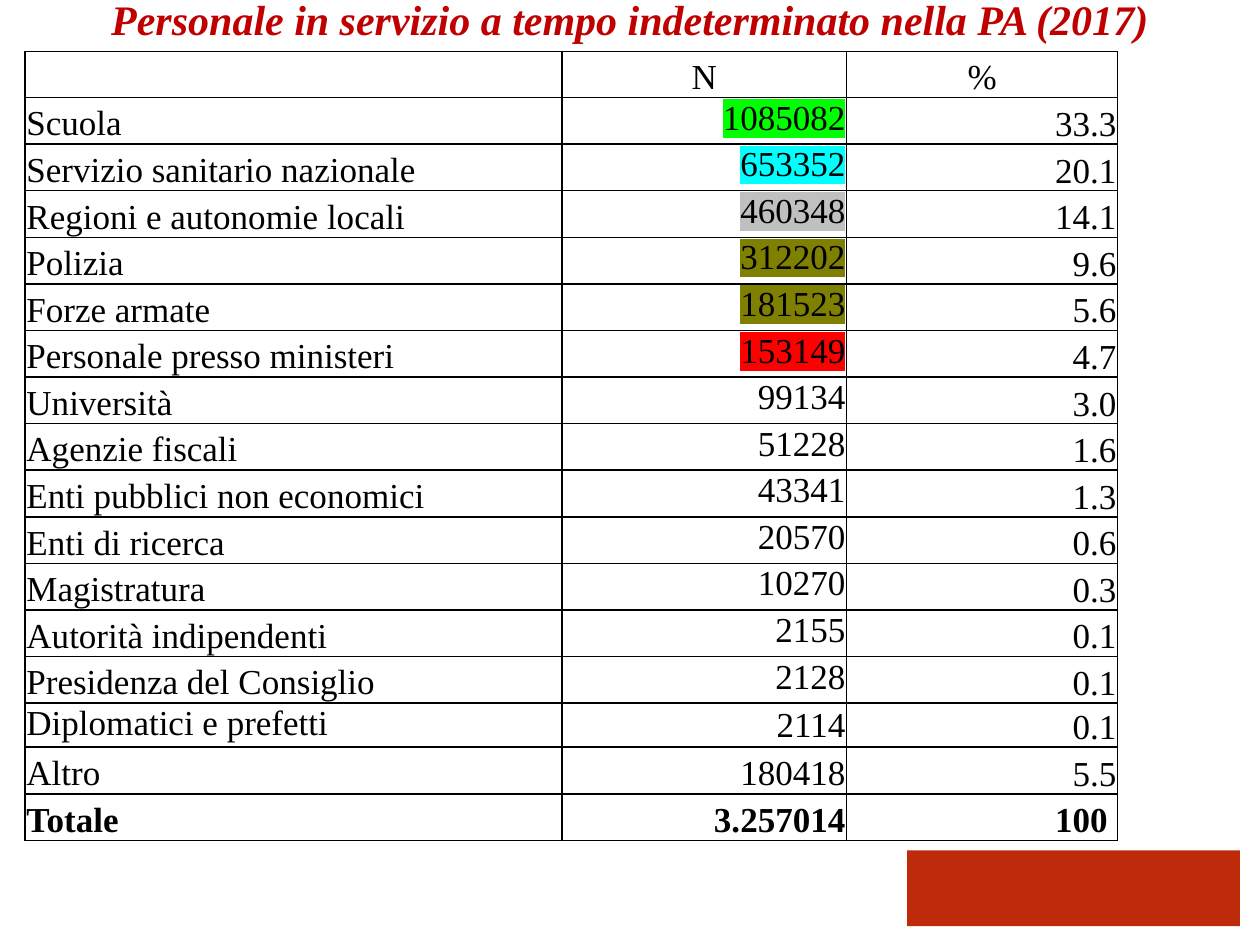
from dataclasses import dataclass

from lxml.etree import SubElement
from pptx import Presentation
from pptx.dml.color import RGBColor
from pptx.enum.shapes import MSO_SHAPE
from pptx.enum.text import MSO_ANCHOR as Anchor, PP_ALIGN as Align
from pptx.oxml import parse_xml
from pptx.oxml.ns import nsdecls, qn
from pptx.util import Inches, Pt


@dataclass(frozen=True)
class Theme:
    font: str = "Times New Roman"
    title_size: int = 24
    table_size: int = 20
    title_color: str = "C00000"
    text_color: str = "000000"
    border_color: str = "000000"
    block_color: str = "BD2B0B"
    border_width: int = 1
    line_spacing: float = 1.15


HEADERS = ["", "N", "%"]
STAFF = [
    ("Scuola", "1085082", "33.3"),
    ("Servizio sanitario nazionale", "653352", "20.1"),
    ("Regioni e autonomie locali", "460348", "14.1"),
    ("Polizia", "312202", "9.6"),
    ("Forze armate", "181523", "5.6"),
    ("Personale presso ministeri", "153149", "4.7"),
    ("Università", "99134", "3.0"),
    ("Agenzie fiscali", "51228", "1.6"),
    ("Enti pubblici non economici", "43341", "1.3"),
    ("Enti di ricerca", "20570", "0.6"),
    ("Magistratura", "10270", "0.3"),
    ("Autorità indipendenti", "2155", "0.1"),
    ("Presidenza del Consiglio", "2128", "0.1"),
    ("Diplomatici e prefetti", "2114", "0.1"),
    ("Altro", "180418", "5.5"),
]
TOTAL = ("Totale", "3.257014", "100 ")
HIGHLIGHTS = {
    "Scuola": "00FF00",
    "Servizio sanitario nazionale": "00FFFF",
    "Regioni e autonomie locali": "C0C0C0",
    "Polizia": "808000",
    "Forze armate": "808000",
    "Personale presso ministeri": "FF0000",
}
COLUMN_WIDTHS = [4.26, 2.26, 2.15]
ROW_HEIGHT, LOW_ROW_HEIGHT = 0.37, 0.35
LOW_ROWS = {"", "Diplomatici e prefetti"}


class SlideBuilder:
    def __init__(self, slide, theme):
        self.slide = slide
        self.theme = theme

    def format_runs(self, paragraph, size, color, bold=False, italic=False):
        for run in paragraph.runs:
            font = run.font
            font.name, font.size = self.theme.font, Pt(size)
            font.bold, font.italic = bold, italic
            font.color.rgb = RGBColor.from_string(color)

    def block(self, left, top, width, height):
        shape = self.slide.shapes.add_shape(
            MSO_SHAPE.RECTANGLE, Inches(left), Inches(top), Inches(width), Inches(height))
        shape.shadow.inherit = False
        shape.fill.solid()
        shape.fill.fore_color.rgb = RGBColor.from_string(self.theme.block_color)
        shape.line.fill.background()

    def title(self, text, left, top, width, height):
        shape = self.slide.shapes.title
        shape.left, shape.top = Inches(left), Inches(top)
        shape.width, shape.height = Inches(width), Inches(height)
        frame = shape.text_frame
        frame.text = text
        frame.word_wrap = True
        frame.vertical_anchor = Anchor.TOP
        paragraph = frame.paragraphs[0]
        paragraph.alignment = Align.CENTER
        self.format_runs(paragraph, self.theme.title_size, self.theme.title_color, True, True)

    def table(self, rows, left, top):
        heights = [LOW_ROW_HEIGHT if row[0] in LOW_ROWS else ROW_HEIGHT for row in rows]
        table = self.slide.shapes.add_table(
            len(rows), len(COLUMN_WIDTHS), Inches(left), Inches(top),
            Inches(sum(COLUMN_WIDTHS)), Inches(sum(heights))).table
        table.first_row = table.horz_banding = False
        for column, width in zip(table.columns, COLUMN_WIDTHS):
            column.width = Inches(width)
        for row, height in zip(table.rows, heights):
            row.height = Inches(height)
        for row_index, row in enumerate(rows):
            for column_index, text in enumerate(row):
                self.cell(table.cell(row_index, column_index), text, row[0], column_index)
        return table

    def cell(self, cell, text, label, column):
        theme = self.theme
        cell.margin_left = cell.margin_right = cell.margin_top = Inches(0.01)
        cell.margin_bottom = 0
        self.borders(cell)
        cell.fill.background()
        cell.text_frame.text = text
        paragraph = cell.text_frame.paragraphs[0]
        is_header, is_total = label == "", label == TOTAL[0]
        is_low = label in LOW_ROWS and not is_header

        # Labels to the left, figures to the right, headers centred
        if is_header:
            paragraph.alignment = Align.CENTER
        elif column > 0:
            paragraph.alignment = Align.RIGHT

        # Wider lines in the header, the closing rows and the labels
        if (is_header or label in ("Altro", TOTAL[0]) and column < 2
                or is_total or column == 0 and not is_low):
            paragraph.line_spacing = theme.line_spacing
        if column == 2 and not (is_header or is_total):
            cell.vertical_anchor = Anchor.BOTTOM
        elif column == 1 and is_low:
            cell.vertical_anchor = Anchor.MIDDLE

        self.format_runs(paragraph, theme.table_size, theme.text_color, is_total)
        if column == 1 and label in HIGHLIGHTS:
            self.highlight(paragraph.runs[0], HIGHLIGHTS[label])

    def borders(self, cell):
        properties = cell._tc.get_or_add_tcPr()
        for side in ("lnL", "lnR", "lnT", "lnB"):
            line = SubElement(properties, qn(f"a:{side}"), w=str(Pt(self.theme.border_width)))
            fill = SubElement(line, qn("a:solidFill"))
            SubElement(fill, qn("a:srgbClr"), val=self.theme.border_color)

    def highlight(self, run, color):
        fill = run._r.get_or_add_rPr().find(qn("a:solidFill"))
        fill.addnext(parse_xml(
            f'<a:highlight {nsdecls("a")}><a:srgbClr val="{color}"/></a:highlight>'))


def main():
    presentation = Presentation()
    presentation.slide_width, presentation.slide_height = Inches(10), Inches(7.5)
    slide = presentation.slides.add_slide(presentation.slide_layouts[5])
    builder = SlideBuilder(slide, Theme())

    # Corner block
    builder.block(7.2, 6.75, 2.64, 0.6)

    # Staff by sector
    builder.table([HEADERS, *STAFF, TOTAL], 0.2, 0.41)

    # Title
    builder.title("Personale in servizio a tempo indeterminato nella PA (2017)", 0, -0.1, 10, 0.5)

    presentation.save("out.pptx")


if __name__ == "__main__":
    main()
